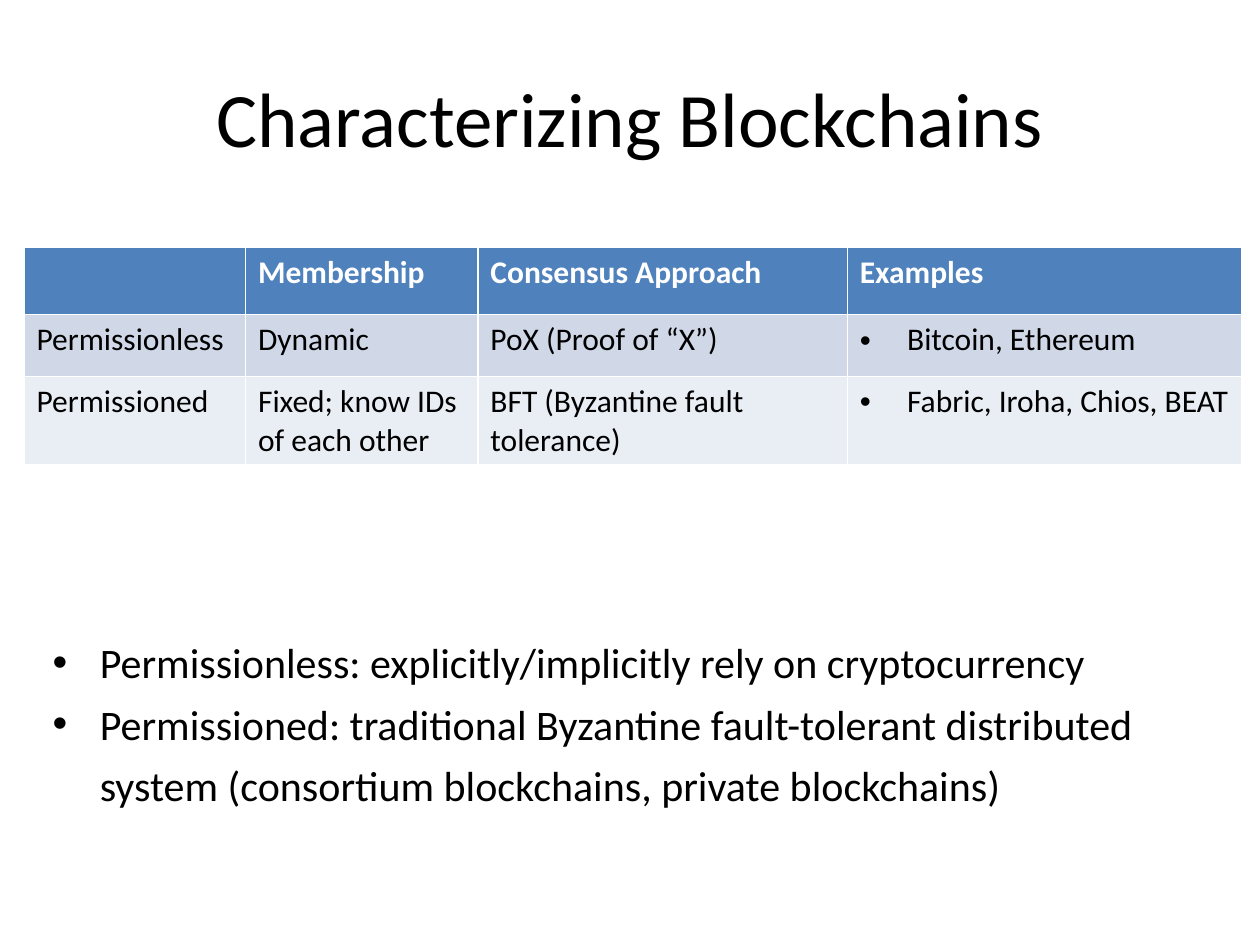
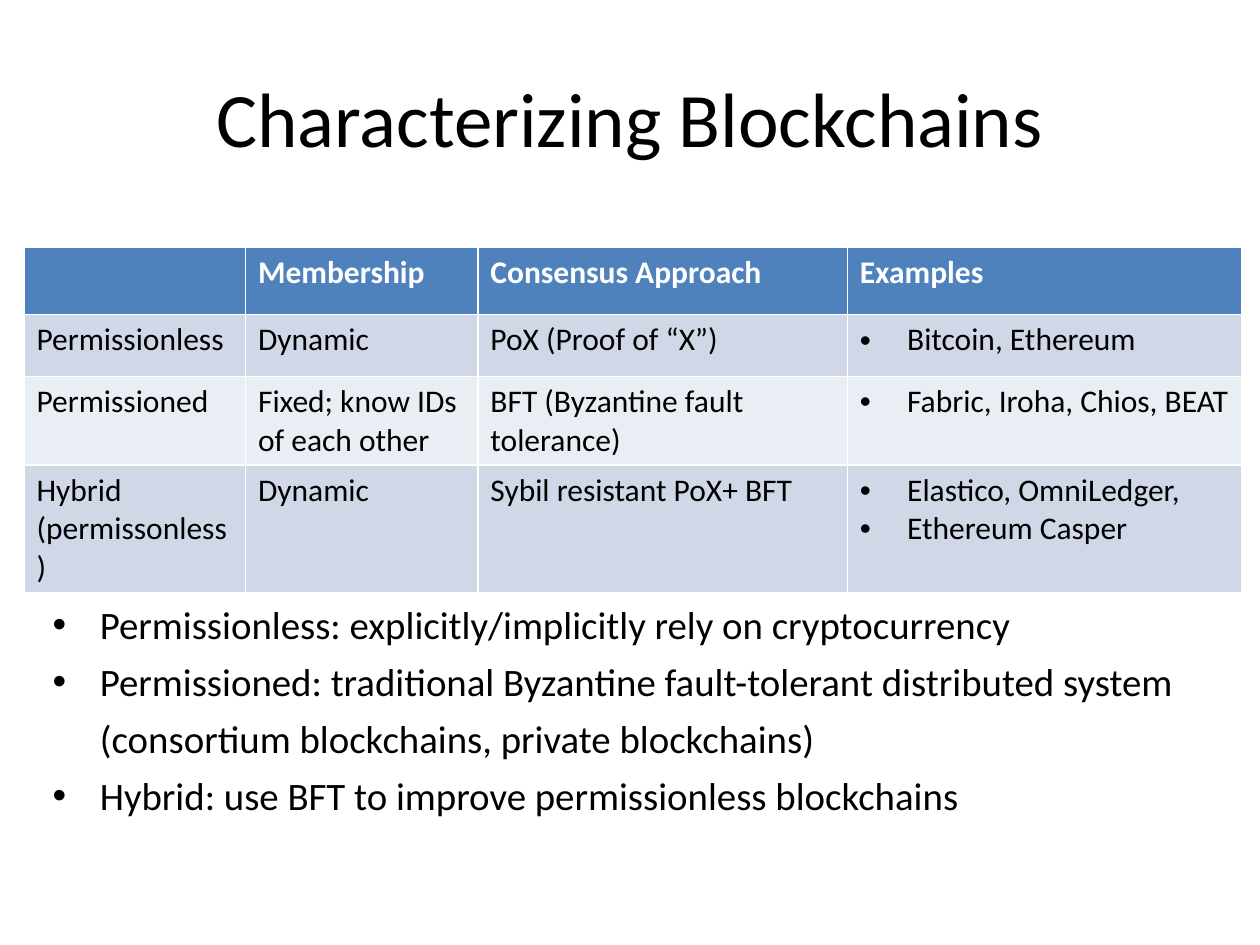
from lxml.etree import SubElement
from pptx import Presentation
from pptx.dml.color import RGBColor
from pptx.enum.text import MSO_ANCHOR, PP_ALIGN
from pptx.oxml.ns import qn
from pptx.util import Pt

FONT = "Calibri"
COLORS = {"text": "000000", "header": "4F81BD", "header_text": "FFFFFF",
          "odd_row": "D0D8E8", "even_row": "E9EDF4"}
TITLE = "Characterizing Blockchains"
HEADER = ("", "Membership", "Consensus Approach", "Examples")
KINDS = [
    ("Permissionless", "Dynamic", "PoX (Proof of “X”)", ["Bitcoin, Ethereum"]),
    ("Permissioned", "Fixed; know IDs of each other",
     "BFT (Byzantine fault tolerance)", ["Fabric, Iroha, Chios, BEAT"]),
    ("Hybrid (permissonless)", "Dynamic", "Sybil resistant PoX+ BFT",
     ["Elastico, OmniLedger,", "Ethereum Casper"]),
]
NOTES = [
    "Permissionless: explicitly/implicitly rely on cryptocurrency",
    "Permissioned: traditional Byzantine fault-tolerant distributed system "
    "(consortium blockchains, private blockchains)",
    "Hybrid: use BFT to improve permissionless blockchains",
]
SLIDES = [
    {"kinds": 2, "notes_top": 354, "notes_height": 110, "notes_size": 24},
    {"kinds": 3, "notes_top": 334, "notes_height": 136, "notes_size": 22.2},
]
COL_WIDTHS = (126.6, 132.8, 211.1, 225.2)
ROW_HEIGHTS = (38.7, 35.3, 50.7, 73)
TABLE_LEFT, TABLE_TOP = 13.7, 141.1
BULLET_INDENT = 27


def write(tf, lines, size, color="text", bold=False, bullets=False):
    for i, line in enumerate(lines):
        p = tf.paragraphs[0] if i == 0 else tf.add_paragraph()
        p.text = line
        if bullets:
            add_bullet(p)
        for r in p.runs:
            r.font.name, r.font.size, r.font.bold = FONT, Pt(size), bold
            r.font.color.rgb = RGBColor.from_string(COLORS[color])


def add_bullet(p):
    pPr = p._p.get_or_add_pPr()
    pPr.set("marL", str(Pt(BULLET_INDENT)))
    pPr.set("indent", str(-Pt(BULLET_INDENT)))
    SubElement(pPr, qn("a:buFont")).set("typeface", "Arial")
    SubElement(pPr, qn("a:buChar")).set("char", "•")


def add_text(s, box, lines, size, **style):
    tf = s.shapes.add_textbox(*map(Pt, box)).text_frame
    tf.word_wrap = True
    write(tf, lines, size, **style)
    return tf


def add_title(s):
    tf = add_text(s, (36, 21.6, 648, 90), [TITLE], 44)
    tf.vertical_anchor = MSO_ANCHOR.MIDDLE
    tf.paragraphs[0].alignment = PP_ALIGN.CENTER


def add_kinds_table(s, kinds):
    rows = [HEADER, *kinds]
    heights = ROW_HEIGHTS[:len(rows)]
    box = (TABLE_LEFT, TABLE_TOP, sum(COL_WIDTHS), sum(heights))
    table = s.shapes.add_table(len(rows), len(HEADER), *map(Pt, box)).table
    for column, width in zip(table.columns, COL_WIDTHS):
        column.width = Pt(width)
    for i, (row, height) in enumerate(zip(rows, heights)):
        table.rows[i].height = Pt(height)
        is_header = i == 0
        fill = "header" if is_header else "odd_row" if i % 2 else "even_row"
        for j, content in enumerate(row):
            cell = table.cell(i, j)
            cell.fill.solid()
            cell.fill.fore_color.rgb = RGBColor.from_string(COLORS[fill])
            bullets = isinstance(content, list)
            write(cell.text_frame, content if bullets else [content], 18,
                  color="header_text" if is_header else "text",
                  bold=is_header, bullets=bullets)


def add_notes(s, notes, top, height, size):
    tf = add_text(s, (23, top, 662, height), notes, size, bullets=True)
    for p in tf.paragraphs:
        p.line_spacing = 1.22


def main():
    prs = Presentation()
    prs.slide_width, prs.slide_height = Pt(720), Pt(540)
    for spec_row in SLIDES:
        s = prs.slides.add_slide(prs.slide_layouts[6])
        count = spec_row["kinds"]
        add_title(s)
        add_kinds_table(s, KINDS[:count])
        add_notes(s, NOTES[:count], spec_row["notes_top"],
                  spec_row["notes_height"], spec_row["notes_size"])
    prs.save("out.pptx")


if __name__ == "__main__":
    main()
